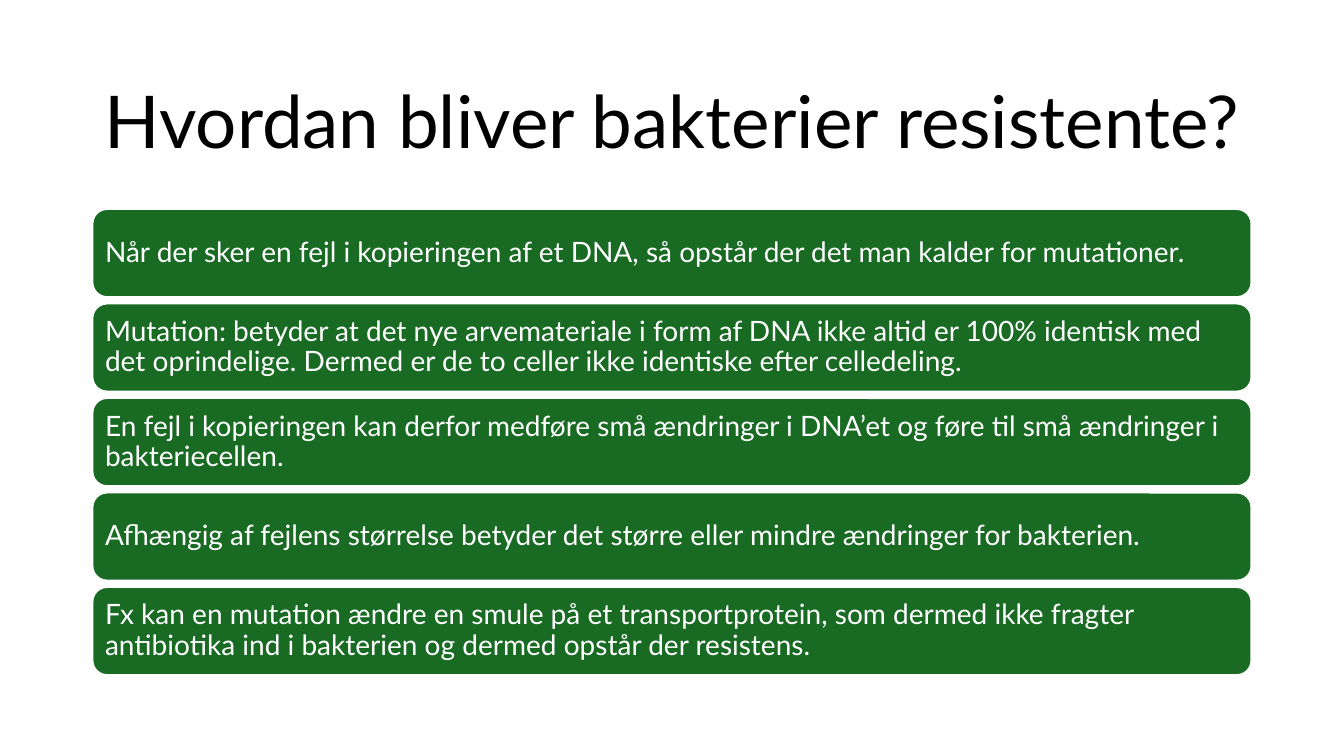
from pptx import Presentation
from pptx.dml.color import RGBColor
from pptx.enum.shapes import MSO_SHAPE
from pptx.enum.text import MSO_ANCHOR, MSO_AUTO_SIZE, PP_ALIGN
from pptx.util import Pt

HEADING = "Hvordan bliver bakterier resistente?"
STATEMENTS = [
    "Når der sker en fejl i kopieringen af et DNA, så opstår der det man kalder for mutationer.",
    "Mutation: betyder at det nye arvemateriale i form af DNA ikke altid er 100% identisk med "
    "det oprindelige. Dermed er de to celler ikke identiske efter celledeling.",
    "En fejl i kopieringen kan derfor medføre små ændringer i DNA’et og føre til små ændringer "
    "i bakteriecellen.",
    "Afhængig af fejlens størrelse betyder det større eller mindre ændringer for bakterien.",
    "Fx kan en mutation ændre en smule på et transportprotein, som dermed ikke fragter "
    "antibiotika ind i bakterien og dermed opstår der resistens.",
]

ROUNDED = MSO_SHAPE.ROUNDED_RECTANGLE
MIDDLE = MSO_ANCHOR.MIDDLE
NO_AUTOFIT = MSO_AUTO_SIZE.NONE
LEFT, CENTER = PP_ALIGN.LEFT, PP_ALIGN.CENTER
BLACK = RGBColor(0x00, 0x00, 0x00)
WHITE = RGBColor(0xFF, 0xFF, 0xFF)
GREEN = RGBColor(0x19, 0x6B, 0x24)
FONT = "Lato"

PX = 9525
SLIDE_WIDTH, SLIDE_HEIGHT = 1280, 720
MARGIN = 88
CONTENT_WIDTH = SLIDE_WIDTH - 2 * MARGIN
HEADING_TOP, HEADING_HEIGHT = 59, 119
BARS_TOP, BAR_HEIGHT, BAR_GAP = 199, 84, 6


def px(*lengths):
    return [length * PX for length in lengths]


def write(holder, text, *, size, color, align, inset):
    frame = holder.text_frame
    frame.text = text
    frame.word_wrap = True
    frame.auto_size = NO_AUTOFIT
    frame.vertical_anchor = MIDDLE
    frame.margin_left = frame.margin_right = inset[0] * PX
    frame.margin_top = frame.margin_bottom = inset[1] * PX
    paragraph = frame.paragraphs[0]
    paragraph.alignment = align
    paragraph.line_spacing = 0.9
    paragraph.font.name = FONT
    paragraph.font.size = Pt(size)
    paragraph.font.color.rgb = color


def main():
    deck = Presentation()
    deck.slide_width, deck.slide_height = px(SLIDE_WIDTH, SLIDE_HEIGHT)
    slide = deck.slides.add_slide(deck.slide_layouts[5])

    heading = slide.shapes.title
    heading.left, heading.top, heading.width, heading.height = px(
        MARGIN, HEADING_TOP, CONTENT_WIDTH, HEADING_HEIGHT)
    write(heading, HEADING, size=52, color=BLACK, align=CENTER, inset=(10, 5))

    for row, statement in enumerate(STATEMENTS):
        top = BARS_TOP + row * (BAR_HEIGHT + BAR_GAP)
        bar = slide.shapes.add_shape(ROUNDED, *px(MARGIN, top, CONTENT_WIDTH, BAR_HEIGHT))
        bar.shadow.inherit = False
        bar.fill.solid()
        bar.fill.fore_color.rgb = GREEN
        bar.line.color.rgb = WHITE
        bar.line.width = Pt(1.5)
        write(bar, statement, size=20, color=WHITE, align=LEFT, inset=(8, 8))

    deck.save("out.pptx")


if __name__ == "__main__":
    main()
